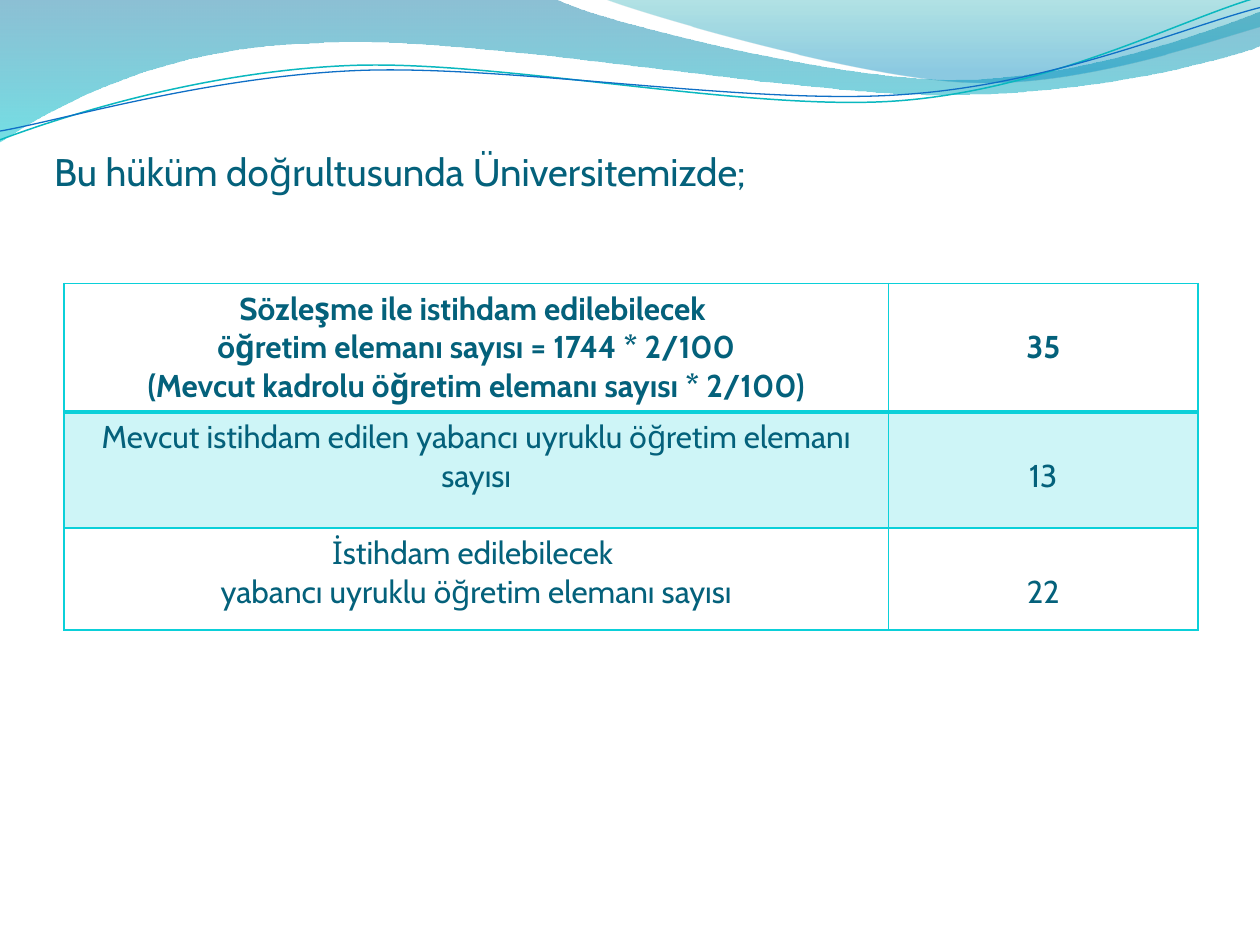
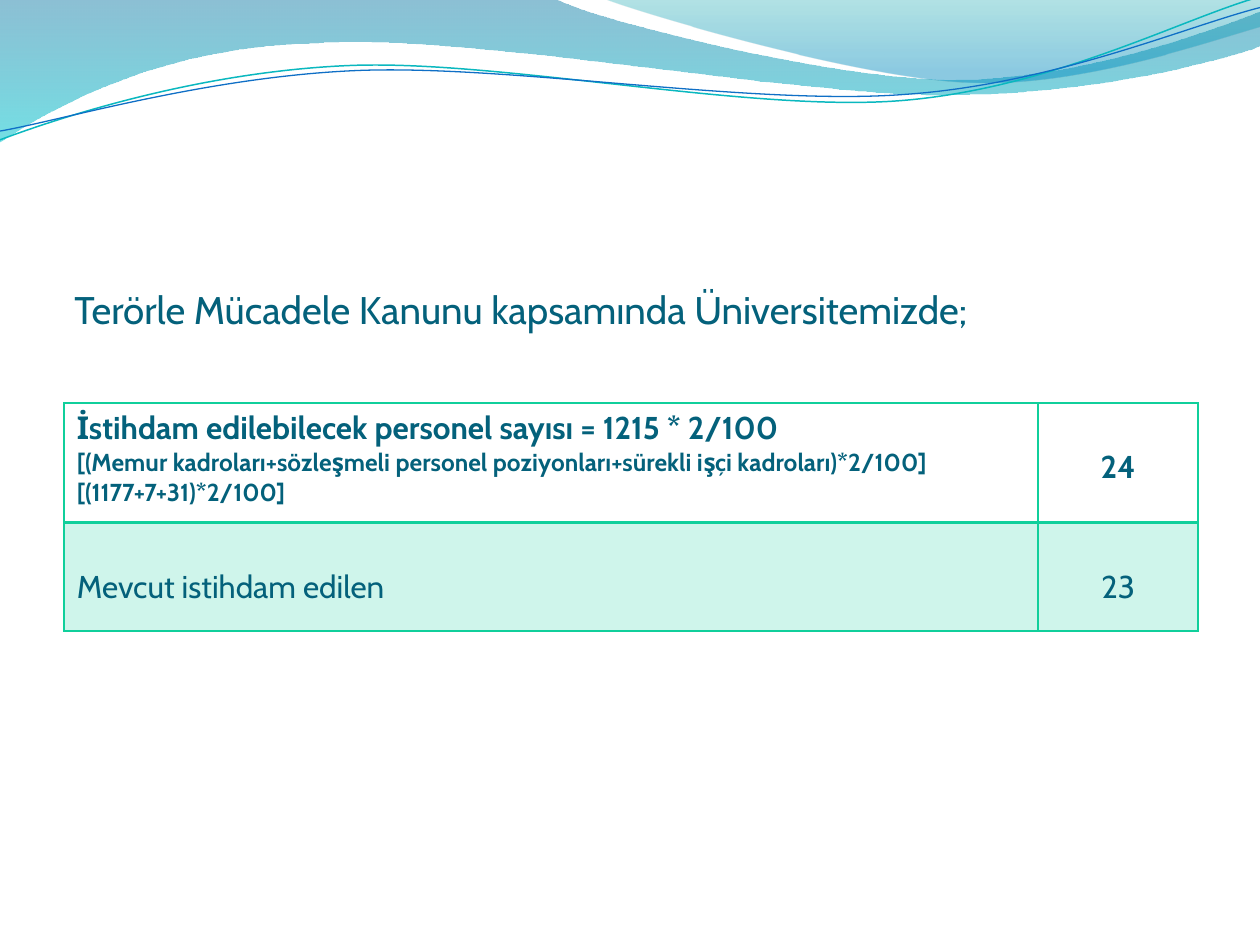
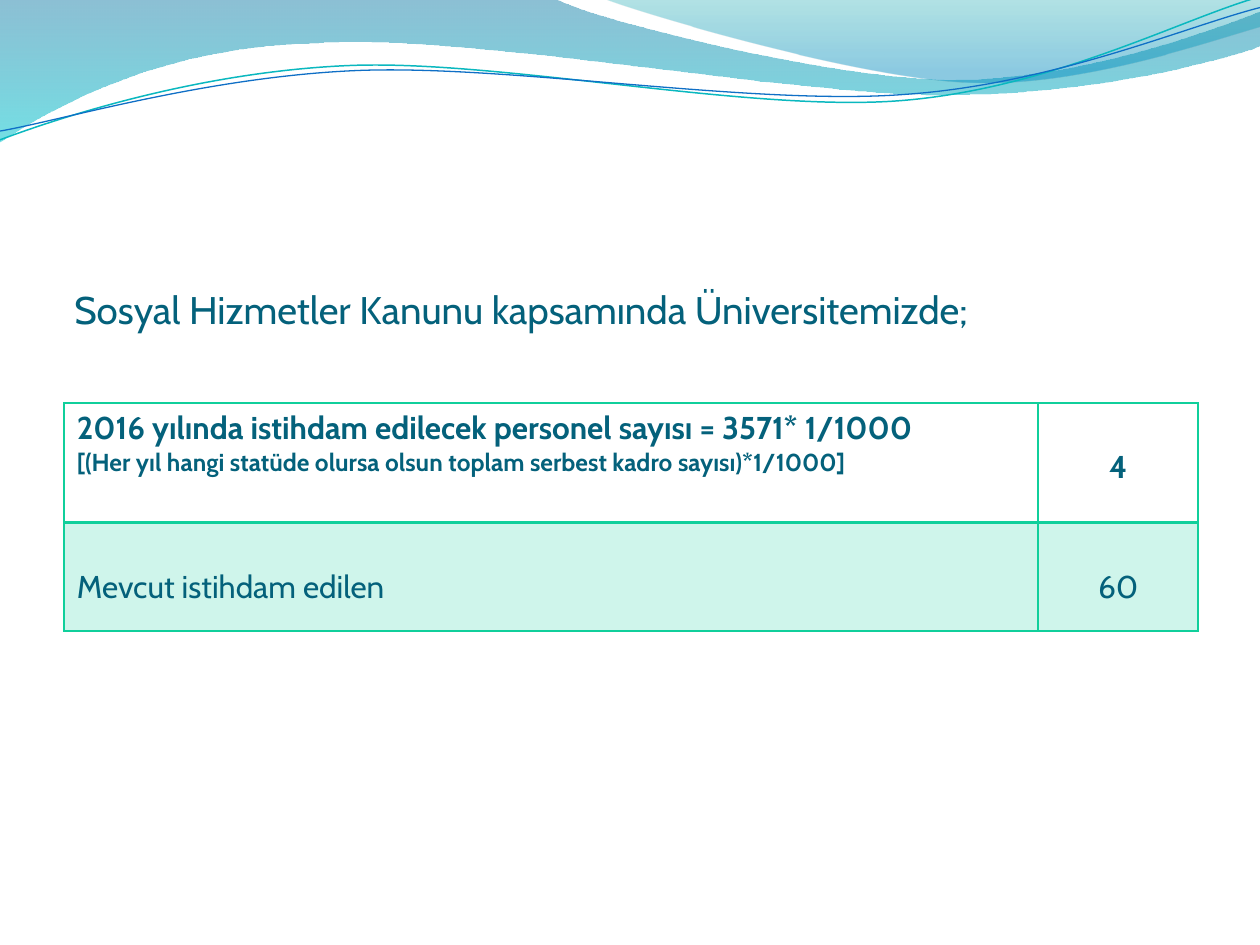
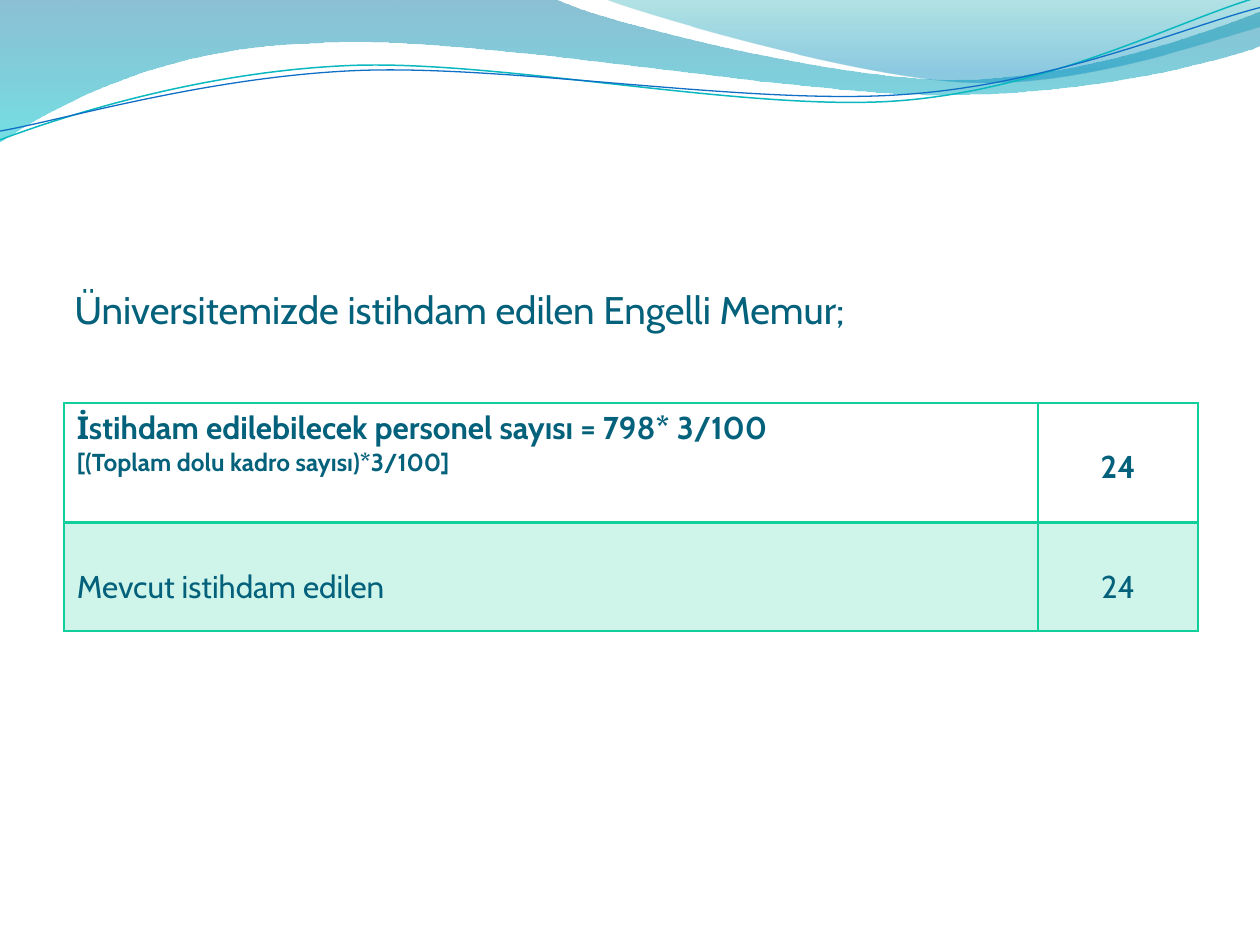
from dataclasses import dataclass
from math import cos, radians, sin

from lxml import etree
from pptx import Presentation
from pptx.dml.color import RGBColor
from pptx.enum.text import MSO_ANCHOR, PP_ALIGN
from pptx.oxml.ns import qn
from pptx.util import Inches, Pt

FONT = "Cabin"
TEXT_BLUE = RGBColor(0x04, 0x61, 0x7B)
CYAN = RGBColor(0x0B, 0xD0, 0xD9)
GREEN = RGBColor(0x10, 0xCF, 0x9B)
LINE_TEAL = RGBColor(0x0A, 0xB8, 0xBF)
LINE_BLUE = RGBColor(0x0F, 0x6F, 0xC6)
WAVE_BLUE = RGBColor(0x00, 0x74, 0xA1)
WAVE_CYAN = RGBColor(0x00, 0xC6, 0xCF)
CREST_TEAL = RGBColor(0x00, 0xA1, 0xA9)
CREST_BLUE = RGBColor(0x00, 0x8B, 0xBF)

TABLE_LEFT = 0.51
CELL_TOP = 0.05
LINE_HEIGHT = 0.305
CURVE_TILT = 2.7  # degrees, counter-clockwise

# Two numbers are a line to a point, six are a Bézier curve.
WAVE = [(0, 0), (4.4, -0.01), (4.76, 0.17, 6.64, 0.63, 7.58, 0.63),
        (8.53, 0.63, 9.58, 0.26, 10, 0.09), (10.01, 0.36),
        (9.83, 0.44, 8.7, 0.76, 7.46, 0.75), (6.22, 0.75, 3.82, 0.28, 2.57, 0.34),
        (1.29, 0.36, 0.46, 0.83, -0.01, 1.13), (0, 0)]
CREST = [(4.79, -0.01), (5.09, 0.11, 6.82, 0.62, 7.69, 0.65),
         (8.56, 0.69, 9.61, 0.32, 10, 0.21), (10, 0), (4.79, -0.01)]
TEAL_CURVE = [(0, 1.11), (0.48, 0.93, 1.58, 0.57, 2.77, 0.52),
              (3.95, 0.47, 5.93, 0.89, 7.13, 0.8), (8.33, 0.71, 9.38, 0.15, 9.98, -0.02)]
BLUE_CURVE = [(0, 1.04), (0.47, 0.96, 1.64, 0.61, 2.83, 0.56),
              (4.03, 0.51, 5.97, 0.84, 7.17, 0.75), (8.36, 0.67, 9.41, 0.21, 10, 0.06)]


@dataclass
class Row:
    height: float
    lines: list  # (text, point size)
    value: str
    label_on_second_line: bool = False


def level(path, center):
    """Turn a tilted path back to level around its center."""
    angle = radians(CURVE_TILT)
    center_x, center_y = center

    def turn(x, y):
        dx, dy = x - center_x, y - center_y
        return (center_x + dx * cos(angle) - dy * sin(angle),
                center_y + dx * sin(angle) + dy * cos(angle))

    return [sum((turn(*pair) for pair in zip(segment[::2], segment[1::2])), ())
            for segment in path]


def add_outline(slide, path, close):
    """Add a freeform through all points, then join each curve's three points."""
    start, *rest = [(Inches(x), Inches(y)) for segment in path
                    for x, y in zip(segment[::2], segment[1::2])]
    builder = slide.shapes.build_freeform(*start)
    builder.add_line_segments(rest, close=close)
    outline = builder.convert_to_shape()
    outline.shadow.inherit = False
    steps = iter(list(outline.element.iter(qn("a:lnTo"))))
    for segment in path[1:]:
        first = next(steps)
        if len(segment) == 6:
            first.tag = qn("a:cubicBezTo")
            for step in (next(steps), next(steps)):
                first.append(step[0])
                step.getparent().remove(step)
    return outline


def add_color(parent, color, opacity):
    srgb = etree.SubElement(parent, qn("a:srgbClr"), val=str(color))
    if opacity < 100:
        etree.SubElement(srgb, qn("a:alpha"), val=str(opacity * 1000))


def add_wave(slide, path, stops):
    """Add a closed band with a top-to-bottom gradient of (position, colour, opacity)."""
    wave = add_outline(slide, path, close=True)
    wave.line.fill.background()
    gradient = etree.Element(qn("a:gradFill"), rotWithShape="1")
    stop_list = etree.SubElement(gradient, qn("a:gsLst"))
    for position, color, opacity in stops:
        stop = etree.SubElement(stop_list, qn("a:gs"), pos=str(position * 1000))
        add_color(stop, color, opacity)
    etree.SubElement(gradient, qn("a:lin"), ang="5400000", scaled="0")
    wave.element.spPr.find(qn("a:custGeom")).addnext(gradient)
    return wave


def add_curve(slide, path, center, color, width):
    curve = add_outline(slide, level(path, center), close=False)
    curve.rotation = -CURVE_TILT
    curve.fill.background()
    curve.line.color.rgb = color
    curve.line.width = Pt(width)
    return curve


def add_header_waves(slide):
    """Draw the header and move it to the layout that all slides share."""
    header = [
        add_wave(slide, WAVE, [(0, WAVE_BLUE, 45), (100, WAVE_CYAN, 55)]),
        add_wave(slide, CREST, [(0, CREST_TEAL, 30), (80, CREST_BLUE, 45)]),
        add_curve(slide, TEAL_CURVE, (4.99, 0.575), LINE_TEAL, 0.85),
        add_curve(slide, BLUE_CURVE, (4.995, 0.59), LINE_BLUE, 0.75),
    ]
    for part in header:
        slide.slide_layout.shapes.element.append(part.element)


def write_line(paragraph, text, size, bold=False, align=PP_ALIGN.LEFT):
    paragraph.text = text
    paragraph.alignment = align
    font = paragraph.font
    font.name, font.size, font.bold = FONT, Pt(size), bold
    font.color.rgb = TEXT_BLUE


def add_title(slide, text, left, top, height):
    title = slide.shapes.add_textbox(Inches(left), Inches(top), Inches(9), Inches(height))
    frame = title.text_frame
    frame.word_wrap = True
    frame.vertical_anchor = MSO_ANCHOR.BOTTOM
    frame.margin_left = frame.margin_right = frame.margin_bottom = 0
    frame.margin_top = Inches(0.05)
    write_line(frame.paragraphs[0], text, 22)


def style_cell(cell, color, widths, shaded):
    """Draw the borders (left, right, top, bottom) and the tint of a cell."""
    properties = cell._tc.get_or_add_tcPr()
    for side, width in zip("LRTB", widths):
        border = etree.SubElement(properties, qn(f"a:ln{side}"), w=str(Pt(width)))
        fill = etree.SubElement(border, qn("a:solidFill"))
        add_color(fill, color, 100)
    if shaded:
        tint = etree.SubElement(properties, qn("a:solidFill"))
        add_color(tint, color, 20)
    else:
        cell.fill.background()


def fill_cell(cell, lines, bold, align, on_second_line):
    cell.margin_top = Inches(CELL_TOP + LINE_HEIGHT * on_second_line)
    frame = cell.text_frame
    for index, (text, size) in enumerate(lines):
        paragraph = frame.add_paragraph() if index else frame.paragraphs[0]
        write_line(paragraph, text, size, bold, align)


def add_quota_table(slide, top, columns, rows, color, label_align):
    """Add labels on the left and counts on the right, under a bold first row."""
    height = sum(row.height for row in rows)
    table = slide.shapes.add_table(len(rows), 2, Inches(TABLE_LEFT), Inches(top),
                                   Inches(sum(columns)), Inches(height)).table
    table.first_row = table.horz_banding = False
    for column, width in zip(table.columns, columns):
        column.width = Inches(width)
    for index, row in enumerate(rows):
        table.rows[index].height = Inches(row.height)
        label, count = table.cell(index, 0), table.cell(index, 1)
        is_header = index == 0
        fill_cell(label, row.lines, is_header, label_align, row.label_on_second_line)
        fill_cell(count, [(row.value, 18)], is_header, PP_ALIGN.CENTER, True)
        widths = (1, 1, 2 if index == 1 else 1, 2 if is_header else 1)
        for cell in (label, count):
            style_cell(cell, color, widths, shaded=index % 2 == 1)


def add_foreign_staff_slide(deck, layout):
    slide = deck.slides.add_slide(layout)
    add_header_waves(slide)
    add_title(slide, "Bu hüküm doğrultusunda Üniversitemizde;", 0.43, 0.92, 0.62)
    rows = [
        Row(1.02, [("Sözleşme ile istihdam edilebilecek ", 18),
                   ("öğretim elemanı sayısı = 1744 * 2/100", 18),
                   ("(Mevcut kadrolu öğretim elemanı sayısı * 2/100)", 18)], "35"),
        Row(0.92, [("Mevcut istihdam edilen yabancı uyruklu öğretim elemanı sayısı", 18)], "13"),
        Row(0.81, [("İstihdam edilebilecek ", 18),
                   ("yabancı uyruklu öğretim elemanı sayısı", 18)], "22"),
    ]
    add_quota_table(slide, 2.25, (6.54, 2.46), rows, CYAN, PP_ALIGN.CENTER)


def add_quota_slide(deck, layout, title, formula, details, quota, employed):
    slide = deck.slides.add_slide(layout)
    add_title(slide, title, 0.59, 2.1, 0.54)
    rows = [
        Row(0.95, [(formula, 18)] + [(detail, 14) for detail in details], quota),
        Row(0.86, [("Mevcut istihdam edilen", 18)], employed, label_on_second_line=True),
    ]
    add_quota_table(slide, 3.2, (7.73, 1.27), rows, GREEN, PP_ALIGN.LEFT)


def main():
    deck = Presentation()
    deck.slide_width, deck.slide_height = Inches(10), Inches(7.5)
    layout = deck.slide_layouts[6]
    add_foreign_staff_slide(deck, layout)
    add_quota_slide(
        deck, layout, "Terörle Mücadele Kanunu kapsamında Üniversitemizde;",
        "İstihdam edilebilecek personel sayısı = 1215 * 2/100",
        ["[(Memur kadroları+sözleşmeli personel poziyonları+sürekli işçi kadroları)*2/100]",
         "[(1177+7+31)*2/100]"], "24", "23")
    add_quota_slide(
        deck, layout, "Sosyal Hizmetler Kanunu kapsamında Üniversitemizde;",
        "2016 yılında istihdam edilecek personel sayısı = 3571* 1/1000",
        ["[(Her yıl hangi statüde olursa olsun toplam serbest kadro sayısı)*1/1000]"], "4", "60")
    add_quota_slide(
        deck, layout, "Üniversitemizde istihdam edilen Engelli Memur;",
        "İstihdam edilebilecek personel sayısı = 798* 3/100",
        ["[(Toplam dolu kadro sayısı)*3/100]"], "24", "24")
    deck.save("out.pptx")


if __name__ == "__main__":
    main()
